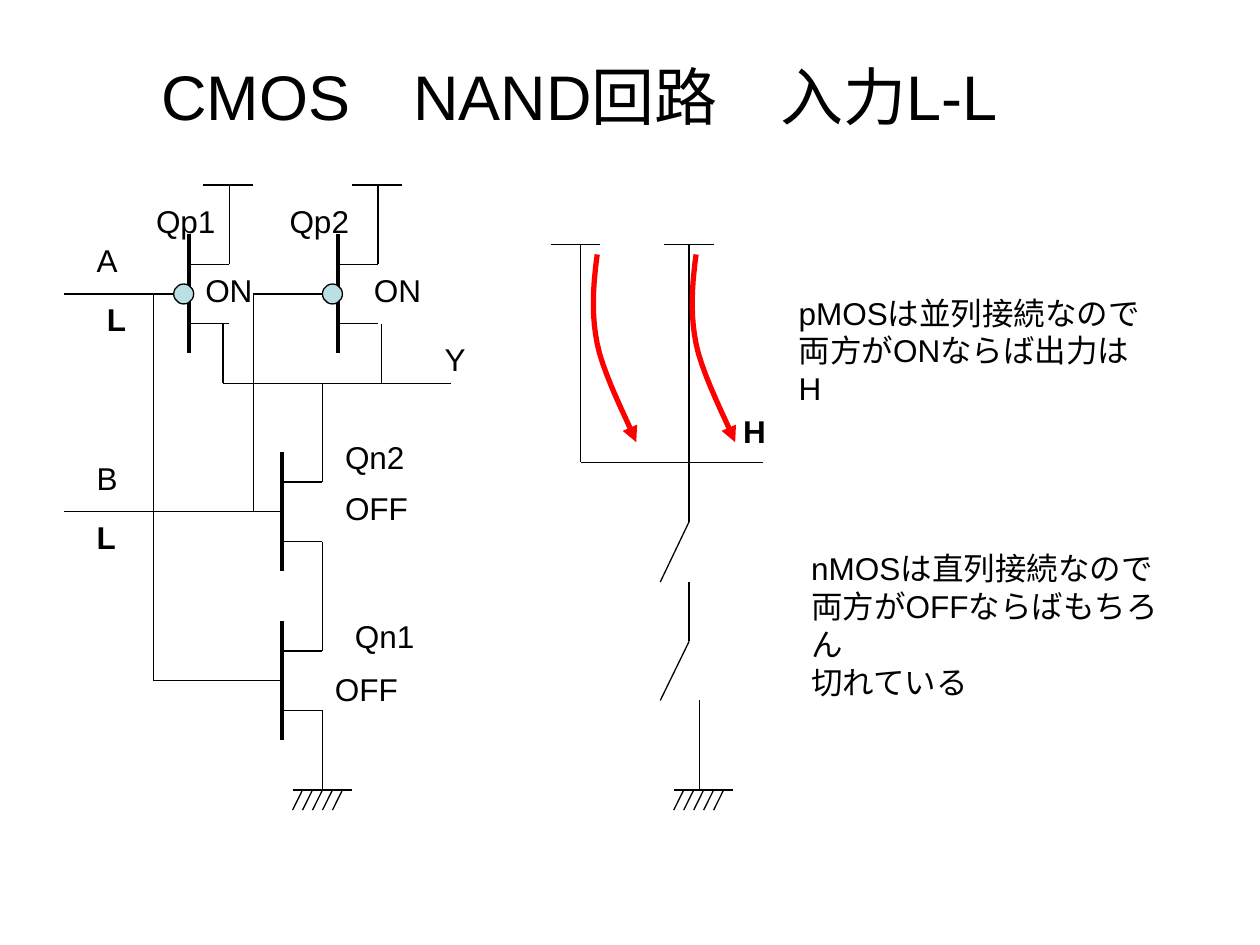
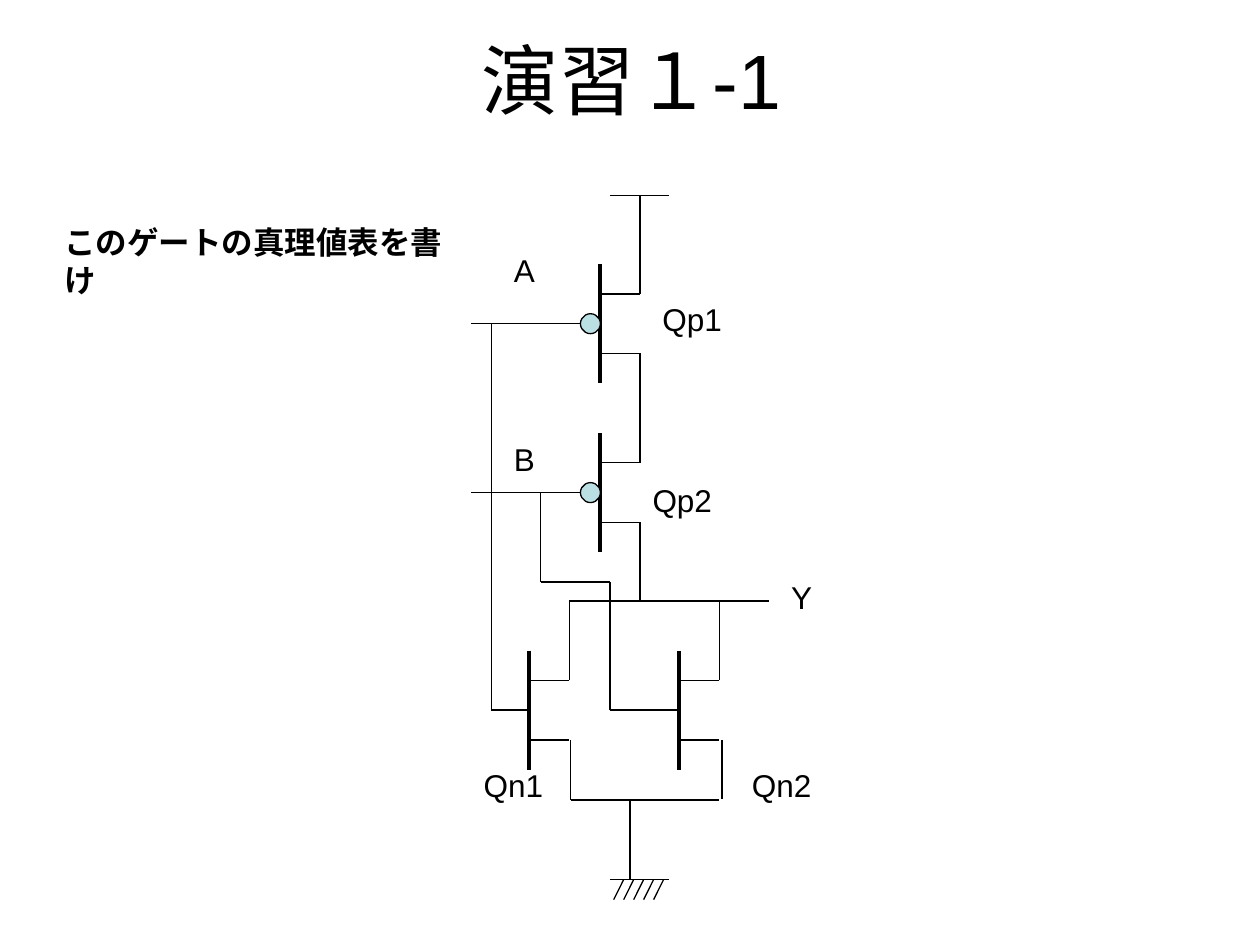
from pptx import Presentation
from pptx.dml.color import RGBColor
from pptx.enum.shapes import MSO_CONNECTOR, MSO_SHAPE
from pptx.enum.text import MSO_ANCHOR, MSO_AUTO_SIZE, PP_ALIGN
from pptx.oxml.ns import qn
from pptx.util import Pt
from lxml import etree

STRAIGHT, OVAL = MSO_CONNECTOR.STRAIGHT, MSO_SHAPE.OVAL
MIDDLE, CENTER = MSO_ANCHOR.MIDDLE, PP_ALIGN.CENTER
FIT_SHAPE = MSO_AUTO_SIZE.SHAPE_TO_FIT_TEXT

BLACK, RED, BUBBLE_FILL = "000000", "FF0000", "BBE0E3"
FONT = "Arial"
THIN, GATE_WIDTH, ARROW_WIDTH = 0.75, 2.25, 3
TITLE_SIZE = (648, 90)
LABEL_FRAME = {"word_wrap": False, "auto_size": FIT_SHAPE}
NOTE_FRAME = {"word_wrap": True, "auto_size": FIT_SHAPE}
TITLE_FRAME = {"word_wrap": True, "vertical_anchor": MIDDLE}

# Transistor: half the gate bar, offset of the two stubs, stub length
GATE_HALF, STUB_OFFSET, STUB = 34, 17, 23
BUBBLE = 11.4
GROUND_WIDTH, HATCH_STEP, HATCH_DROP, HATCHES = 34, 5.7, 11.5, 5
LABEL_HEIGHT = 29

# Two cubic curves, as offsets from the arrow's start
CURRENT_PATH = [
    [(0, 0), (-2.2, 16.6), (-3.6, 33.1), (0, 51.1)],
    [(0, 51.1), (3.6, 69.1), (18.7, 97.9), (22.3, 107.3)],
]
CURVE_STEPS = 10

# Labels: text, left, top, width, bold
# Notes: paragraphs, left, top, width, height, bold
# Supplies: left, top, width; grounds: left, top, first hatch
NAND = {
    "title": ("CMOS　NAND回路　入力L-L", 7.2, 9.4, 36),
    "transistors": [(108, 168), (193, 168), (161.3, 292.5), (161.3, 389)],
    "bubbles": [(105, 168), (190, 168)],
    "supplies": [(116, 105.8, 28.4), (201.4, 105.8, 28.4),
                 (314.6, 139.7, 28.4), (379.4, 139.7, 28.4)],
    "grounds": [(167.2, 451.4, 5.7), (385, 451.4, 5.7)],
    "wires": [
        # inputs A and B
        [(36.7, 168), (99.4, 168)],
        [(87.8, 168), (87.8, 389), (161.3, 389)],
        [(36.7, 292.5), (161.3, 292.5)],
        [(184.3, 168), (144.7, 168), (144.7, 292.5)],
        # supply to output Y to ground
        [(131, 151), (131, 105.8)],
        [(216, 151), (216, 105.8)],
        [(127.4, 185), (127.4, 219), (257.8, 219)],
        [(218.2, 185), (218.2, 219)],
        [(184.3, 219), (184.3, 275.5)],
        [(184.3, 309.5), (184.3, 372)],
        [(184.3, 406), (184.3, 451.4)],
        # equivalent switches
        [(436.3, 264.2), (331.9, 264.2), (331.9, 139.7)],
        [(393.8, 139.7), (393.8, 298.1), (377.3, 332.6)],
        [(393.8, 332.6), (393.8, 366.5), (377.3, 400.3)],
        [(399.6, 400.3), (399.6, 451.4)],
    ],
    "currents": [(341.3, 145.4), (397.8, 145.4)],
    "labels": [
        ("A", 48.2, 133.9, 26.6, False), ("L", 54, 167.8, 25.2, True),
        ("B", 48.2, 258.5, 26.6, False), ("L", 48.2, 292.3, 25.2, True),
        ("Y", 247, 190.8, 26.6, False), ("H", 417.6, 231.8, 27.4, True),
        ("Qp1", 82.1, 111.6, 48.2, False), ("ON", 110.2, 151.2, 41.8, False),
        ("Qp2", 158.4, 111.6, 48.2, False), ("ON", 206.6, 151.2, 41.8, False),
        ("Qn2", 190.1, 247, 48.2, False), ("OFF", 190.1, 275.8, 50.4, False),
        ("Qn1", 195.8, 349.2, 48.2, False), ("OFF", 184.3, 379.4, 50.4, False),
    ],
    "notes": [
        (["pMOSは並列接続なので", "両方がONならば出力はH"],
         449.3, 164.2, 211, 50.4, False),
        (["nMOSは直列接続なので", "両方がOFFならばもちろん", "切れている"],
         456.5, 310.3, 216, 72, False),
    ],
}

EXERCISE = {
    "title": ("演習１-1", 36.7, 0, 44),
    "transistors": [(342.7, 185), (342.7, 281.5),
                    (302.4, 405.8), (388, 405.8)],
    "bubbles": [(337.4, 185), (337.4, 281.5)],
    "supplies": [(348.5, 111.6, 34)],
    "grounds": [(348.5, 502.6, 7.9)],
    "wires": [
        # inputs A and B
        [(269.3, 185), (332, 185)],
        [(280.8, 185), (280.8, 405.8), (302.4, 405.8)],
        [(269.3, 281.5), (342.7, 281.5)],
        [(308.9, 281.5), (308.9, 332.6), (348.5, 332.6),
         (348.5, 405.8), (388, 405.8)],
        # supply to output Y to ground
        [(365.7, 111.6), (365.7, 168)],
        [(365.7, 202), (365.7, 264.5)],
        [(365.7, 298.5), (365.7, 343.4)],
        [(325.4, 388.8), (325.4, 343.4), (439.2, 343.4)],
        [(411, 388.8), (411, 343.4)],
        [(326.2, 422.8), (326.2, 457.2), (411.1, 457.2)],
        [(412.6, 422.8), (412.6, 456.5)],
        [(360, 457.2), (360, 502.6)],
    ],
    "currents": [],
    "labels": [
        ("A", 286.6, 139.7, 26.6, False), ("B", 286.6, 247.7, 26.6, False),
        ("Y", 445, 326.9, 26.6, False),
        ("Qp1", 371.5, 167.8, 48.2, False), ("Qp2", 365.8, 271.4, 48.2, False),
        ("Qn1", 269.3, 434.2, 48.2, False), ("Qn2", 422.6, 434.2, 48.2, False),
    ],
    "notes": [
        (["このゲートの真理値表を書け"], 29.5, 123.8, 236.9, LABEL_HEIGHT, True),
    ],
}


def rgb(color):
    return RGBColor.from_string(color)


def set_all(target, values):
    for name, value in values.items():
        setattr(target, name, value)


def add_text(slide, paragraphs, box, frame_format, size=18, bold=False,
             align=None):
    frame = slide.shapes.add_textbox(*map(Pt, box)).text_frame
    set_all(frame, frame_format)
    frame.text = "\n".join(paragraphs)
    for paragraph in frame.paragraphs:
        paragraph.alignment = align
        for run in paragraph.runs:
            set_all(run.font, {"name": FONT, "size": Pt(size), "bold": bold})
            run.font.color.rgb = rgb(BLACK)


def set_line(line, color, width):
    line.color.rgb = rgb(color)
    line.width = Pt(width)


def add_wire(slide, points, width=THIN):
    """Join successive points with straight connectors."""
    for start, end in zip(points, points[1:]):
        wire = slide.shapes.add_connector(STRAIGHT, *map(Pt, start + end))
        set_line(wire.line, BLACK, width)
        etree.SubElement(wire._element.spPr, qn("a:effectLst"))


def add_transistor(slide, x, y):
    add_wire(slide, [(x, y - GATE_HALF), (x, y + GATE_HALF)], GATE_WIDTH)
    for stub_y in (y - STUB_OFFSET, y + STUB_OFFSET):
        add_wire(slide, [(x, stub_y), (x + STUB, stub_y)])


def add_bubble(slide, x, y):
    """Mark a pMOS gate with a circle centred on x, y."""
    box = (x - BUBBLE / 2, y - BUBBLE / 2, BUBBLE, BUBBLE)
    bubble = slide.shapes.add_shape(OVAL, *map(Pt, box))
    bubble.shadow.inherit = False
    bubble.fill.solid()
    bubble.fill.fore_color.rgb = rgb(BUBBLE_FILL)
    set_line(bubble.line, BLACK, THIN)


def add_supply(slide, left, top, width):
    add_wire(slide, [(left, top), (left + width, top)])


def add_ground(slide, left, top, first_hatch):
    add_wire(slide, [(left, top), (left + GROUND_WIDTH, top)])
    for i in range(HATCHES):
        x = left + first_hatch + i * HATCH_STEP
        add_wire(slide, [(x, top), (x - HATCH_STEP, top + HATCH_DROP)])


def curve_point(curve, t):
    weights = ((1 - t) ** 3, 3 * t * (1 - t) ** 2, 3 * t * t * (1 - t), t ** 3)
    return tuple(sum(w * value for w, value in zip(weights, axis))
                 for axis in zip(*curve))


def add_current(slide, x, y):
    """Draw a curved red arrow that starts at x, y."""
    points = [curve_point(curve, i / CURVE_STEPS)
              for curve in CURRENT_PATH for i in range(1, CURVE_STEPS + 1)]
    builder = slide.shapes.build_freeform(Pt(x), Pt(y))
    builder.add_line_segments(
        [(Pt(x + dx), Pt(y + dy)) for dx, dy in points], close=False)
    arrow = builder.convert_to_shape()
    arrow.shadow.inherit = False
    arrow.fill.background()
    set_line(arrow.line, RED, ARROW_WIDTH)
    etree.SubElement(arrow.line._get_or_add_ln(), qn("a:tailEnd"),
                     type="triangle")


PARTS = {"wires": lambda slide, *points: add_wire(slide, points),
         "transistors": add_transistor, "bubbles": add_bubble,
         "supplies": add_supply, "grounds": add_ground,
         "currents": add_current}


def add_circuit_slide(deck, circuit):
    slide = deck.slides.add_slide(deck.slide_layouts[6])
    title, left, top, size = circuit["title"]
    add_text(slide, [title], (left, top, *TITLE_SIZE), TITLE_FRAME, size,
             align=CENTER)
    for part, draw in PARTS.items():
        for values in circuit[part]:
            draw(slide, *values)
    for text, left, top, width, bold in circuit["labels"]:
        add_text(slide, [text], (left, top, width, LABEL_HEIGHT), LABEL_FRAME,
                 bold=bold)
    for paragraphs, *box, bold in circuit["notes"]:
        add_text(slide, paragraphs, box, NOTE_FRAME, bold=bold)


def main():
    deck = Presentation()
    set_all(deck, {"slide_width": Pt(720), "slide_height": Pt(540)})
    for circuit in (NAND, EXERCISE):
        add_circuit_slide(deck, circuit)
    deck.save("out.pptx")


if __name__ == "__main__":
    main()
